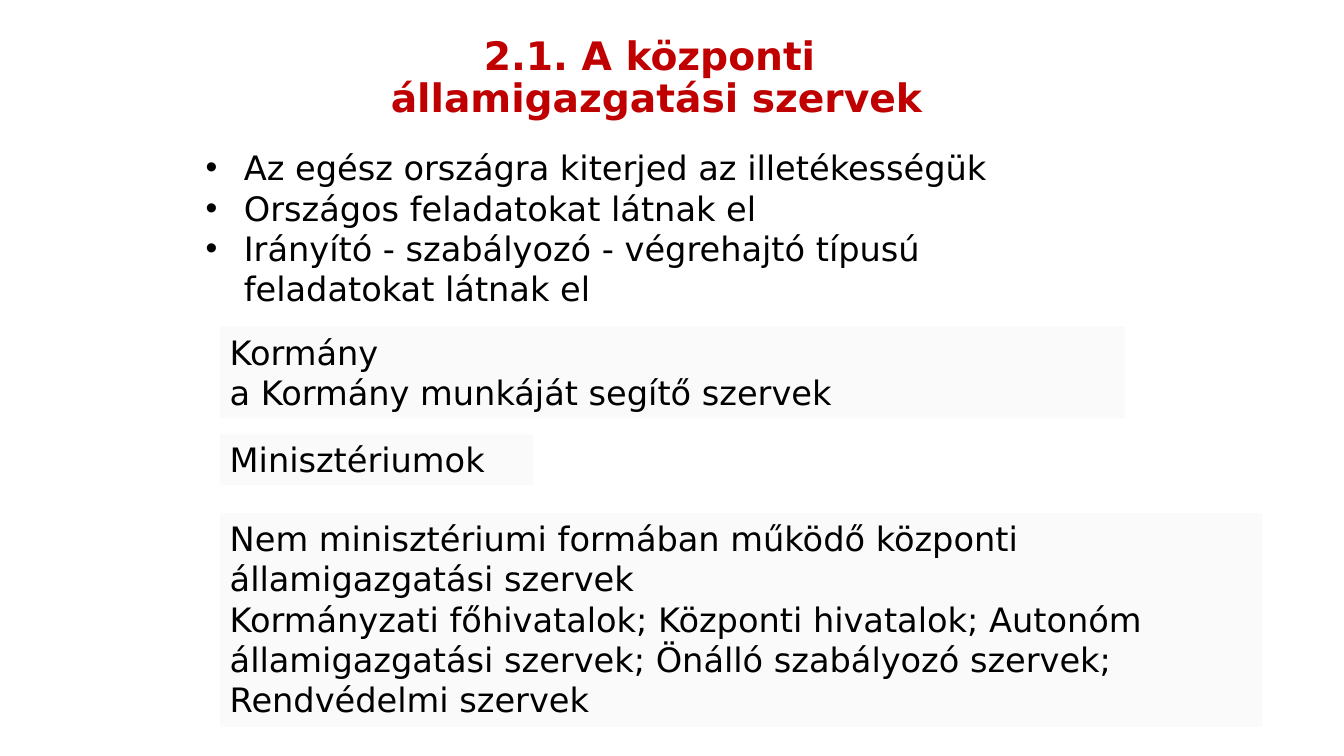
from dataclasses import dataclass

from lxml import etree
from pptx import Presentation
from pptx.dml.color import RGBColor
from pptx.enum.shapes import MSO_SHAPE
from pptx.enum.text import MSO_ANCHOR, MSO_AUTO_SIZE, PP_ALIGN
from pptx.oxml.ns import qn
from pptx.slide import Slide
from pptx.text.text import TextFrame
from pptx.util import Emu, Pt

RECTANGLE = MSO_SHAPE.RECTANGLE
TOP, MIDDLE = MSO_ANCHOR.TOP, MSO_ANCHOR.MIDDLE
LEFT, CENTER = PP_ALIGN.LEFT, PP_ALIGN.CENTER
FIXED, GROW = MSO_AUTO_SIZE.NONE, MSO_AUTO_SIZE.SHAPE_TO_FIT_TEXT
TITLE_ONLY = 5
EMU_PER_PX = 9144
FONT = "DejaVu Sans"
RED, BLACK, PANEL_GREY = "C00000", "000000", "FAFAFA"


@dataclass(frozen=True)
class TextStyle:
    size: int = 24
    color: str = BLACK
    bold: bool = False
    align: PP_ALIGN = LEFT
    line_spacing: float = 1.0
    hanging: int = 0
    bullet: str = ""


@dataclass(frozen=True)
class Panel:
    top: int
    width: int
    height: int
    lines: tuple[str, ...]


TITLE_STYLE = TextStyle(28, RED, True, CENTER, 0.9, 25)
FEATURE_STYLE = TextStyle(hanging=38, bullet="•")
PANEL_STYLE = TextStyle()

TITLE = ("2.1. A központi ", "államigazgatási szervek")
FEATURES = (
    "Az egész országra kiterjed az illetékességük",
    "Országos feladatokat látnak el",
    "Irányító - szabályozó - végrehajtó típusú feladatokat látnak el",
)
PANEL_LEFT = 218
PANELS = (
    Panel(324, 898, 91, ("Kormány", "a Kormány munkáját segítő szervek")),
    Panel(431, 311, 50, ("Minisztériumok",)),
    Panel(509, 1034, 212, (
        "Nem minisztériumi formában működő központi államigazgatási szervek",
        "Kormányzati főhivatalok; Központi hivatalok; Autonóm államigazgatási "
        "szervek; Önálló szabályozó szervek; Rendvédelmi szervek",
    )),
)


def px(length: int) -> Emu:
    return Emu(length * EMU_PER_PX)


def rgb(color: str) -> RGBColor:
    return RGBColor.from_string(color)


def apply(target: object, values: dict[str, object]) -> None:
    for attribute, value in values.items():
        setattr(target, attribute, value)


def write(frame: TextFrame, lines: tuple[str, ...], style: TextStyle,
          anchor: MSO_ANCHOR, fit: MSO_AUTO_SIZE) -> None:
    apply(frame, {"word_wrap": True, "auto_size": fit, "vertical_anchor": anchor})
    for index, line in enumerate(lines):
        paragraph = frame.add_paragraph() if index else frame.paragraphs[0]
        apply(paragraph, {"alignment": style.align, "line_spacing": style.line_spacing})
        properties = paragraph._p.get_or_add_pPr()
        properties.set("marL", str(px(style.hanging)))
        properties.set("indent", str(-px(style.hanging)))
        if style.bullet:
            etree.SubElement(properties, qn("a:buFont")).set("typeface", "Arial")
            etree.SubElement(properties, qn("a:buChar")).set("char", style.bullet)
        run = paragraph.add_run()
        run.text = line
        apply(run.font, {"name": FONT, "size": Pt(style.size), "bold": style.bold})
        run.font.color.rgb = rgb(style.color)


def add_title(slide: Slide) -> None:
    title = slide.shapes.title
    apply(title, {"left": px(167), "top": px(13), "width": px(968), "height": px(130)})
    write(title.text_frame, TITLE, TITLE_STYLE, MIDDLE, FIXED)


def add_features(slide: Slide) -> None:
    features = slide.shapes.add_textbox(px(194), px(155), px(898), px(142))
    write(features.text_frame, FEATURES, FEATURE_STYLE, MIDDLE, FIXED)


def add_panel(slide: Slide, panel: Panel) -> None:
    box = slide.shapes.add_shape(
        RECTANGLE, px(PANEL_LEFT), px(panel.top), px(panel.width), px(panel.height))
    box.shadow.inherit = False
    box.fill.solid()
    box.fill.fore_color.rgb = rgb(PANEL_GREY)
    box.line.fill.background()
    write(box.text_frame, panel.lines, PANEL_STYLE, TOP, GROW)


def main() -> None:
    deck = Presentation()
    apply(deck, {"slide_width": px(1333), "slide_height": px(750)})
    slide = deck.slides.add_slide(deck.slide_layouts[TITLE_ONLY])
    add_title(slide)
    add_features(slide)
    for panel in PANELS:
        add_panel(slide, panel)
    deck.save("out.pptx")


if __name__ == "__main__":
    main()
